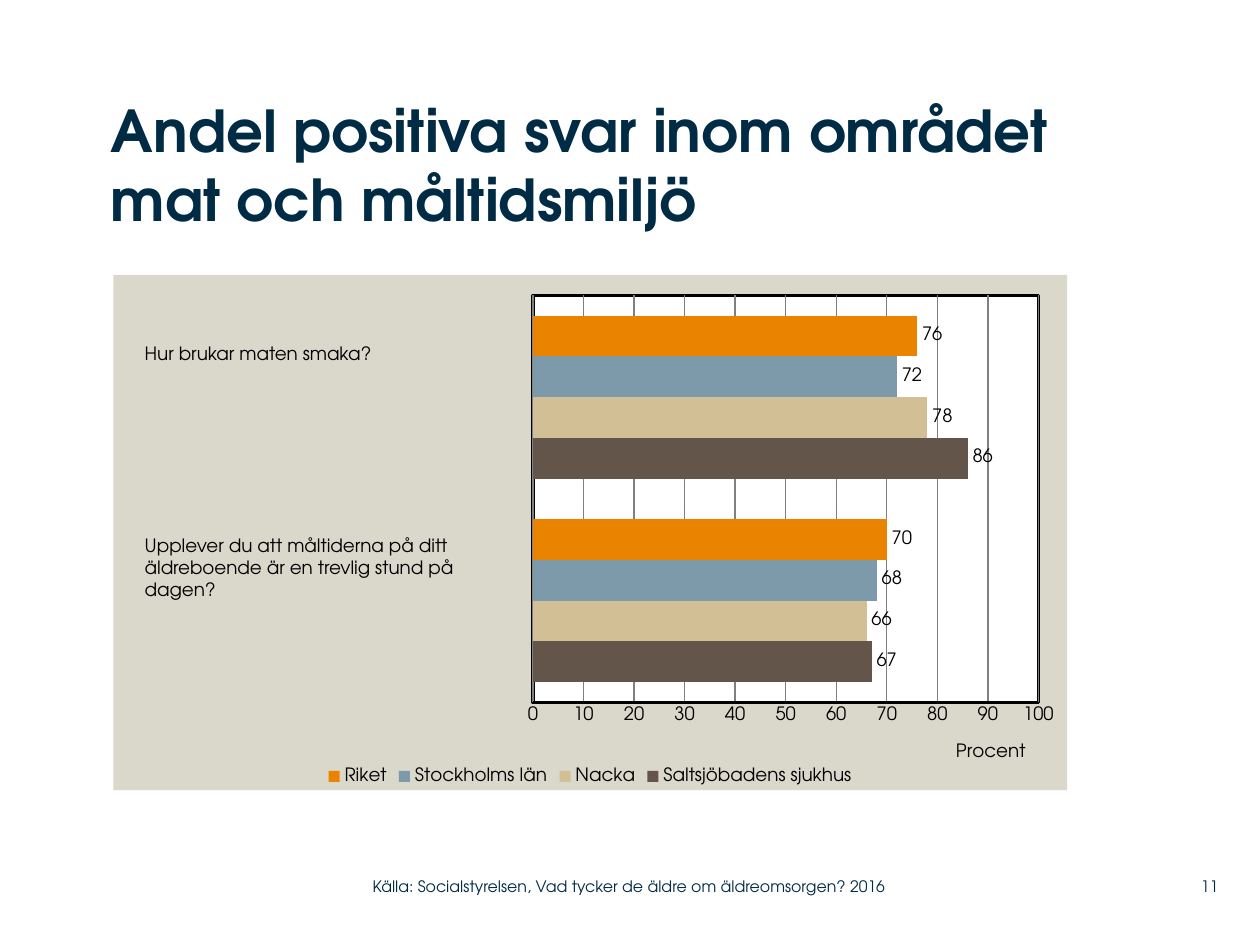
from lxml import etree
from pptx import Presentation
from pptx.chart.data import CategoryChartData
from pptx.dml.color import RGBColor
from pptx.enum.chart import XL_CHART_TYPE as ChartType, XL_LABEL_POSITION as LabelPosition
from pptx.enum.chart import XL_LEGEND_POSITION as LegendPosition, XL_TICK_MARK as TickMark
from pptx.enum.text import MSO_ANCHOR as Anchor, PP_ALIGN as Align
from pptx.oxml import parse_xml
from pptx.oxml.ns import nsdecls, qn
from pptx.util import Pt

THEME = {
    "font": "TeX Gyre Adventor",
    "navy": "002B45", "black": "000000", "grid": "808080",
    "panel": "DAD7CB", "plot": "FFFFFF",
    "title": 33, "body": 10.5, "footer": 9,
}
TITLE = "Andel positiva svar inom området mat och måltidsmiljö"
QUESTIONS = [
    ((75.6, 192.2, 214, 20), ["Hur brukar maten smaka?"]),
    ((75.6, 301.7, 211, 45),
     ["Upplever du att måltiderna på ditt äldreboende är en trevlig stund på", "dagen?"]),
]
SOURCE = "Källa: Socialstyrelsen, Vad tycker de äldre om äldreomsorgen? 2016"
PAGE_NUMBER = "11"
CATEGORIES = ["1", "2"]
SERIES = [
    ("Saltsjöbadens sjukhus", (67, 86), "635549"),
    ("Nacka", (66, 78), "D3BF96"),
    ("Stockholms län", (68, 72), "7D9AAA"),
    ("Riket", (70, 76), "E98300"),
]
CHART_BOX = (64.8, 157, 545, 294.5)
PLOT_LAYOUT = {"x": 0.44, "y": 0.04, "w": 0.53, "h": 0.79}
AXIS_TITLE_LAYOUT = {"x": 0.88, "y": 0.9}


def style_font(font, size, color, bold=False):
    font.name = THEME["font"]
    font.size = Pt(size)
    font.bold = bold
    font.color.rgb = RGBColor.from_string(color)


def add_text(slide, box, lines, size, color, bold=False, inset=True,
             anchor=Anchor.TOP, align=Align.LEFT):
    frame = slide.shapes.add_textbox(*map(Pt, box)).text_frame
    frame.word_wrap = True
    frame.vertical_anchor = anchor
    if not inset:
        frame.margin_left = frame.margin_right = frame.margin_top = frame.margin_bottom = 0
    frame.text = "\n".join(lines)
    for paragraph in frame.paragraphs:
        paragraph.alignment = align
        style_font(paragraph.font, size, color, bold)


def manual_layout(positions, inner=False):
    """Return a c:layout element with positions as fractions of the chart."""
    target = '<c:layoutTarget val="inner"/>' if inner else ""
    modes = "".join(f'<c:{key}Mode val="edge"/>' for key in ("x", "y"))
    values = "".join(f'<c:{key} val="{value}"/>' for key, value in positions.items())
    return parse_xml(f'<c:layout {nsdecls("c")}><c:manualLayout>{target}{modes}{values}'
                     "</c:manualLayout></c:layout>")


def area_format(fill, line=None, width=0):
    outline = (f'<a:ln w="{Pt(width)}"><a:solidFill><a:srgbClr val="{line}"/></a:solidFill></a:ln>'
               if line else "<a:ln><a:noFill/></a:ln>")
    return parse_xml(f'<c:spPr {nsdecls("c", "a")}><a:solidFill><a:srgbClr val="{fill}"/>'
                     f"</a:solidFill>{outline}</c:spPr>")


def remove_layout(element):
    for layout in element.findall(qn("c:layout")):
        element.remove(layout)


def add_chart(slide):
    data = CategoryChartData()
    data.categories = CATEGORIES
    for name, values, _ in SERIES:
        data.add_series(name, values)
    chart = slide.shapes.add_chart(ChartType.BAR_CLUSTERED, *map(Pt, CHART_BOX), data).chart
    style_font(chart.font, THEME["body"], THEME["black"])
    chart.has_title = False
    chart.has_legend = True
    chart.legend.position = LegendPosition.BOTTOM
    chart.legend.include_in_layout = False
    style_font(chart.legend.font, THEME["body"], THEME["black"])

    plot = chart.plots[0]
    plot.gap_width = 100
    plot.overlap = 0
    plot.vary_by_categories = False
    for series, (_, _, color) in zip(plot.series, SERIES):
        series.format.fill.solid()
        series.format.fill.fore_color.rgb = RGBColor.from_string(color)
        labels = series.data_labels
        labels.show_value = True
        labels.position = LabelPosition.OUTSIDE_END
        style_font(labels.font, THEME["body"], THEME["black"])

    chart.category_axis.visible = False
    axis = chart.value_axis
    axis.minimum_scale, axis.maximum_scale, axis.major_unit = 0, 100, 10
    axis.major_tick_mark = axis.minor_tick_mark = TickMark.NONE
    style_font(axis.tick_labels.font, THEME["body"], THEME["black"])
    for line, color, width in ((axis.format.line, THEME["black"], 2),
                               (axis.major_gridlines.format.line, THEME["grid"], 0.75)):
        line.color.rgb = RGBColor.from_string(color)
        line.width = Pt(width)
    title_frame = axis.axis_title.text_frame
    title_frame.text = "Procent"
    style_font(title_frame.paragraphs[0].font, THEME["body"], THEME["black"])

    title = title_frame._txBody.getparent().getparent()
    remove_layout(title)
    title.find(qn("c:tx")).addnext(manual_layout(AXIS_TITLE_LAYOUT))
    chart_space = chart._chartSpace
    chart_part = chart_space.find(qn("c:chart"))
    chart_part.addnext(area_format(THEME["panel"]))
    plot_area = chart_part.find(qn("c:plotArea"))
    remove_layout(plot_area)
    plot_area.insert(0, manual_layout(PLOT_LAYOUT, inner=True))
    plot_area.append(area_format(THEME["plot"], THEME["black"], 2))


def main():
    presentation = Presentation()
    presentation.slide_width, presentation.slide_height = Pt(720), Pt(540)
    slide = presentation.slides.add_slide(presentation.slide_layouts[6])
    add_chart(slide)
    add_text(slide, (63.4, 54, 606, 102), [TITLE], THEME["title"], THEME["navy"],
             bold=True, inset=False)
    for box, lines in QUESTIONS:
        add_text(slide, box, lines, THEME["body"], THEME["black"])
    for box, text, align in (((662.4, 496, 33.8, 21), PAGE_NUMBER, Align.RIGHT),
                             ((213, 496, 319, 21), SOURCE, Align.LEFT)):
        add_text(slide, box, [text], THEME["footer"], THEME["navy"], inset=False,
                 anchor=Anchor.MIDDLE, align=align)
    presentation.save("out.pptx")


if __name__ == "__main__":
    main()
